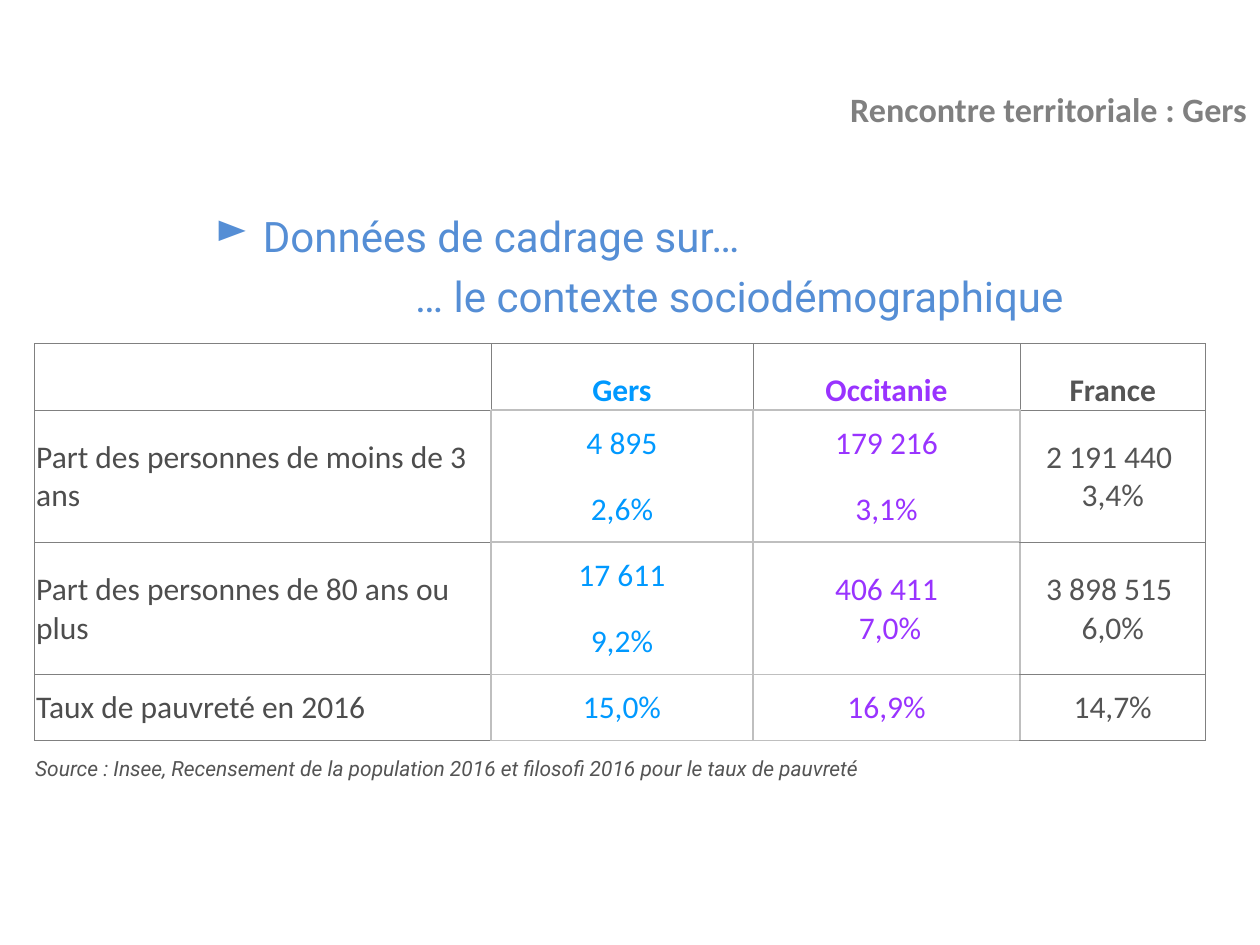
from lxml import etree
from pptx import Presentation
from pptx.dml.color import RGBColor
from pptx.enum.text import MSO_ANCHOR, PP_ALIGN
from pptx.oxml.ns import qn
from pptx.util import Cm, Pt

LEFT, MID, RIGHT = PP_ALIGN.LEFT, PP_ALIGN.CENTER, PP_ALIGN.RIGHT
LOW, HALF = MSO_ANCHOR.BOTTOM, MSO_ANCHOR.MIDDLE

BLUE = RGBColor(0x55, 0x8E, 0xD5)
GREY = RGBColor(0x80, 0x80, 0x80)
PALE = RGBColor(0xBF, 0xBF, 0xBF)
DARK = RGBColor(0x54, 0x54, 0x54)
SLATE = RGBColor(0x4D, 0x4D, 0x4D)
SKY = RGBColor(0x00, 0x99, 0xFF)
PLUM = RGBColor(0x99, 0x33, 0xFF)

HEAD = dict(name="Calibri", size=Pt(19.5), bold=True, color=GREY)
TITLE = dict(name="Roboto", size=Pt(24), color=BLUE)
NOTE = dict(name="Roboto", size=Pt(12), italic=True, color=DARK)
CELL = dict(name="Calibri", size=Pt(18))
INSET = dict(margin_left=Cm(0.03), margin_right=Cm(0.03),
             margin_top=Cm(0.03), margin_bottom=Cm(0))

COLS = (3.62, 2.08, 2.12, 1.47)
TINTS = (SLATE, SKY, PLUM, DARK)
ROWS = (
    ("", "Gers", "Occitanie", "France"),
    ("Part des personnes de moins de 3 ans", "4 895", "179 216", "2 191 440 \v3,4%"),
    ("", "2,6%", "3,1%", ""),
    ("Part des personnes de 80 ans ou plus", "17 611", "406 411\v 7,0%", "3 898 515 \v6,0%"),
    ("", "9,2%", "", ""),
    ("Taux de pauvreté en 2016", "15,0%", "16,9%", "14,7%"),
)
PAIRS = {1: (0, 3), 3: (0, 2, 3)}


def apply(thing, style):
    for key, value in style.items():
        if key == "color":
            thing.color.rgb = value
        else:
            setattr(thing, key, value)


def write(para, text, style, align=LEFT):
    para.text = text
    para.alignment = align
    for run in para.runs:
        apply(run.font, style)


def add_box(slide, box):
    frame = slide.shapes.add_textbox(*map(Cm, box)).text_frame
    frame.word_wrap = True
    return frame


def add_head(slide, box):
    frame = add_box(slide, box)
    frame.margin_top = Cm(1.02)
    write(frame.paragraphs[0], "Rencontre territoriale : Gers", HEAD, RIGHT)


def add_title(slide, box):
    frame = add_box(slide, box)
    first = frame.paragraphs[0]
    write(first, "Données de cadrage sur…", TITLE)
    props = first._p.get_or_add_pPr()
    props.set("marL", str(Cm(0.96)))
    props.set("indent", str(Cm(-0.96)))
    etree.SubElement(props, qn("a:buChar")).set("char", "►")
    last = frame.add_paragraph()
    write(last, "… le contexte sociodémographique", TITLE, RIGHT)
    last.space_before = Pt(5.6)


def add_note(slide, box):
    text = "Source : Insee, Recensement de la population 2016 et filosofi 2016 pour le taux de pauvreté"
    write(add_box(slide, box).paragraphs[0], text, NOTE)


def draw_edge(cell, side, color):
    line = etree.SubElement(cell._tc.get_or_add_tcPr(), qn("a:ln" + side))
    if color is None:
        etree.SubElement(line, qn("a:noFill"))
        return
    line.set("w", str(Pt(0.5 if color == GREY else 1)))
    fill = etree.SubElement(line, qn("a:solidFill"))
    etree.SubElement(fill, qn("a:srgbClr")).set("val", str(color))


def frame_cell(cell, row, col):
    outer = col in (0, 3)
    split = not (cell.is_merge_origin or cell.is_spanned)
    flat = GREY if outer else PALE
    edges = {
        "L": GREY if row == 0 or col == 0 else PALE,
        "R": GREY if row == 0 or col == 3 else PALE,
        "T": GREY if row == 0 else None if split and row in (2, 4) else flat,
        "B": None if split and row in PAIRS else flat,
    }
    for side, color in edges.items():
        draw_edge(cell, side, color)


def add_grid(slide, box):
    table = slide.shapes.add_table(len(ROWS), len(COLS), *map(Cm, box)).table
    table.first_row = table.horz_banding = False
    for col, part in zip(table.columns, COLS):
        col.width = Cm(box[2] * part / sum(COLS))
    for row in table.rows:
        row.height = Cm(box[3] / len(ROWS))
    for top, spans in PAIRS.items():
        for col in spans:
            table.cell(top, col).merge(table.cell(top + 1, col))
    for r, texts in enumerate(ROWS):
        for c, text in enumerate(texts):
            cell = table.cell(r, c)
            apply(cell, INSET)
            cell.vertical_anchor = HALF if r else LOW
            style = dict(CELL, bold=r == 0, color=TINTS[c])
            if text:
                write(cell.text_frame.paragraphs[0], text, style, MID if c else LEFT)
            frame_cell(cell, r, c)
            cell.fill.background()


def main():
    deck = Presentation()
    deck.slide_width, deck.slide_height = Cm(25.4), Cm(19.05)
    slide = deck.slides.add_slide(deck.slide_layouts[6])
    add_head(slide, (4.5, 0.76, 20.9, 2.36))
    add_title(slide, (4.09, 4.11, 17.6, 3.2))
    add_note(slide, (0.46, 15.11, 19.81, 1.4))
    add_grid(slide, (0.7, 6.93, 23.6, 8))
    deck.save("out.pptx")


if __name__ == "__main__":
    main()
